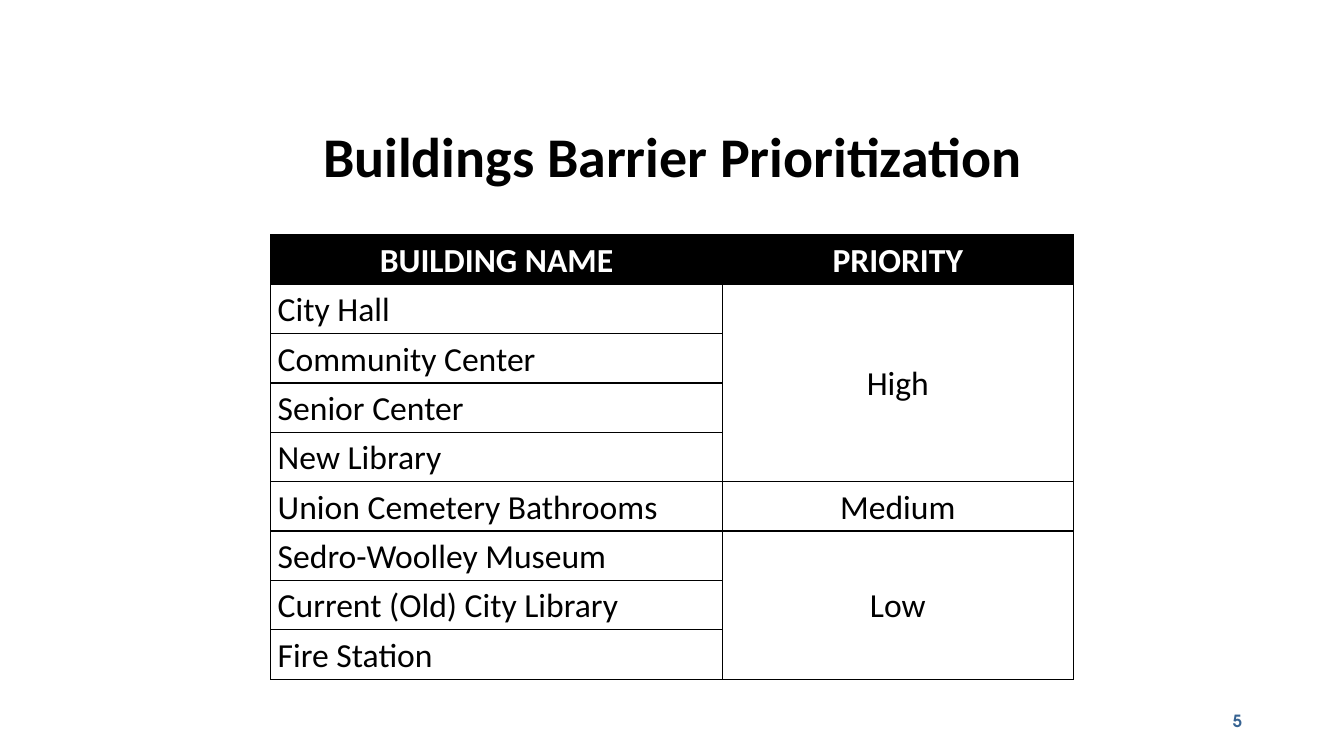
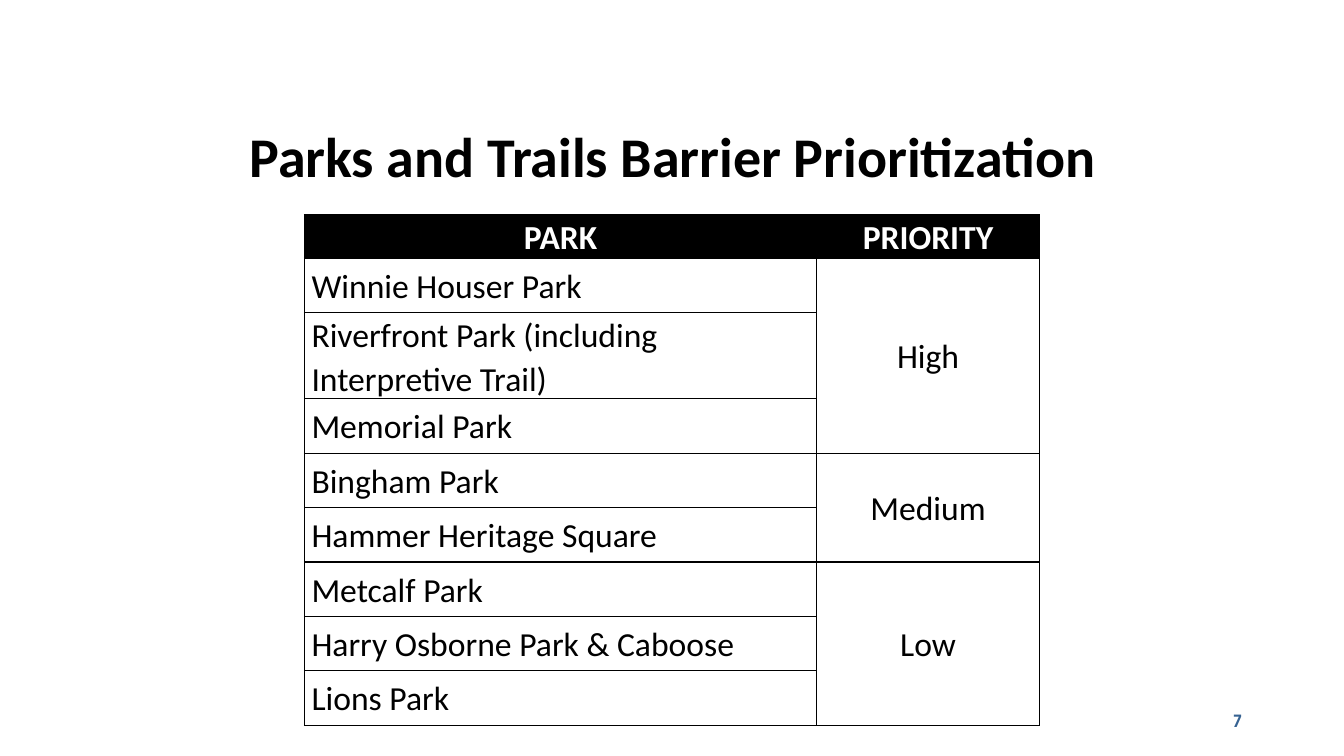
from lxml.etree import SubElement
from pptx import Presentation
from pptx.dml.color import RGBColor
from pptx.enum.text import MSO_ANCHOR, MSO_AUTO_SIZE, PP_ALIGN
from pptx.oxml.ns import qn
from pptx.util import Pt

# Content: each priority group lists the places it covers
SLIDES = [
    {
        "title": "Buildings Barrier Prioritization",
        "number": "5",
        "header": ("BUILDING NAME", "PRIORITY"),
        "groups": [
            ("High", ["City Hall", "Community Center", "Senior Center", "New Library"]),
            ("Medium", ["Union Cemetery Bathrooms"]),
            ("Low", ["Sedro-Woolley Museum", "Current (Old) City Library", "Fire Station"]),
        ],
        "top": 233, "columns": (448, 348), "header_height": 49, "row_height": 49,
    },
    {
        "title": "Parks and Trails Barrier Prioritization",
        "number": "7",
        "header": ("PARK", "PRIORITY"),
        "groups": [
            ("High", ["Winnie Houser Park",
                      "Riverfront Park (including Interpretive Trail)",
                      "Memorial Park"]),
            ("Medium", ["Bingham Park", "Hammer Heritage Square"]),
            ("Low", ["Metcalf Park", "Harry Osborne Park & Caboose", "Lions Park"]),
        ],
        "top": 213, "columns": (508, 221), "header_height": 43, "row_height": 54,
    },
]

# Geometry in px, 100 px to the inch
SCALE = 9144
PAGE_WIDTH, PAGE_HEIGHT = 1333, 750
TITLE_BOX = (167, 108, 1000, 85)
NUMBER_BOX = (942, 695, 300, 40)
CELL_INSET = 7

THEME = {
    "black": "000000",
    "white": "FFFFFF",
    "border_width": Pt(1),
    "title": {"name": "Calibri", "size": Pt(40), "bold": True, "color": "000000"},
    "number": {"name": "TeX Gyre Adventor", "size": Pt(12), "bold": True, "color": "376392"},
    "header": {"name": "Calibri", "size": Pt(24), "bold": True, "color": "FFFFFF"},
    "body": {"name": "Calibri", "size": Pt(24), "bold": False, "color": "000000"},
}


def px(*lengths):
    return [round(length * SCALE) for length in lengths]


def set_attributes(target, **values):
    for name, value in values.items():
        setattr(target, name, value)


def write(frame, text, style, align, spacing=1.0):
    para = frame.paragraphs[0]
    set_attributes(para, alignment=align, line_spacing=spacing)
    span = para.add_run()
    span.text = text
    for name, value in THEME[style].items():
        if name == "color":
            span.font.color.rgb = RGBColor.from_string(value)
        else:
            setattr(span.font, name, value)


def add_title(page, text):
    title = page.shapes.title
    set_attributes(title, **dict(zip(("left", "top", "width", "height"), px(*TITLE_BOX))))
    set_attributes(title.text_frame, word_wrap=True, auto_size=MSO_AUTO_SIZE.NONE,
                   vertical_anchor=MSO_ANCHOR.BOTTOM)
    write(title.text_frame, text, "title", PP_ALIGN.CENTER, 0.9)


def add_number(page, text):
    box = page.shapes.add_textbox(*px(*NUMBER_BOX))
    set_attributes(box.text_frame, word_wrap=True, vertical_anchor=MSO_ANCHOR.MIDDLE)
    write(box.text_frame, text, "number", PP_ALIGN.RIGHT)


def format_cell(cell, fill):
    inset, = px(CELL_INSET)
    set_attributes(cell, margin_left=inset, margin_right=inset, margin_top=0,
                   margin_bottom=0, vertical_anchor=MSO_ANCHOR.MIDDLE)
    cell.fill.solid()
    cell.fill.fore_color.rgb = RGBColor.from_string(fill)
    # Borders come before the fill in the cell properties
    properties = cell._tc.get_or_add_tcPr()
    for position, side in enumerate(("lnL", "lnR", "lnT", "lnB")):
        line = SubElement(properties, qn("a:" + side), w=str(THEME["border_width"]))
        solid = SubElement(line, qn("a:solidFill"))
        SubElement(solid, qn("a:srgbClr"), val=THEME["black"])
        properties.insert(position, line)


def add_priority_table(page, content):
    columns = content["columns"]
    places = [place for _, members in content["groups"] for place in members]
    heights = [content["header_height"]] + [content["row_height"]] * len(places)
    width = sum(columns)
    frame = page.shapes.add_table(
        len(heights), len(columns),
        *px((PAGE_WIDTH - width) / 2, content["top"], width, sum(heights)))
    table = frame.table
    table.horz_banding = False
    for column, size in zip(table.columns, px(*columns)):
        column.width = size
    for row, size in zip(table.rows, px(*heights)):
        row.height = size
    for index, row in enumerate(table.rows):
        for cell in row.cells:
            format_cell(cell, THEME["white"] if index else THEME["black"])

    # Header, place names, then one merged cell for each priority
    for column, label in enumerate(content["header"]):
        write(table.cell(0, column).text_frame, label, "header", PP_ALIGN.CENTER, 1.07)
    for row, place in enumerate(places, 1):
        write(table.cell(row, 0).text_frame, place, "body", PP_ALIGN.LEFT, 1.07)
    first = 1
    for priority, members in content["groups"]:
        last = first + len(members) - 1
        cell = table.cell(first, 1)
        if last > first:
            cell.merge(table.cell(last, 1))
        write(cell.text_frame, priority, "body", PP_ALIGN.CENTER, 1.07)
        first = last + 1


def main():
    deck = Presentation()
    deck.slide_width, deck.slide_height = px(PAGE_WIDTH, PAGE_HEIGHT)
    for content in SLIDES:
        page = deck.slides.add_slide(deck.slide_layouts[5])
        add_title(page, content["title"])
        add_number(page, content["number"])
        add_priority_table(page, content)
    deck.save("out.pptx")


if __name__ == "__main__":
    main()
